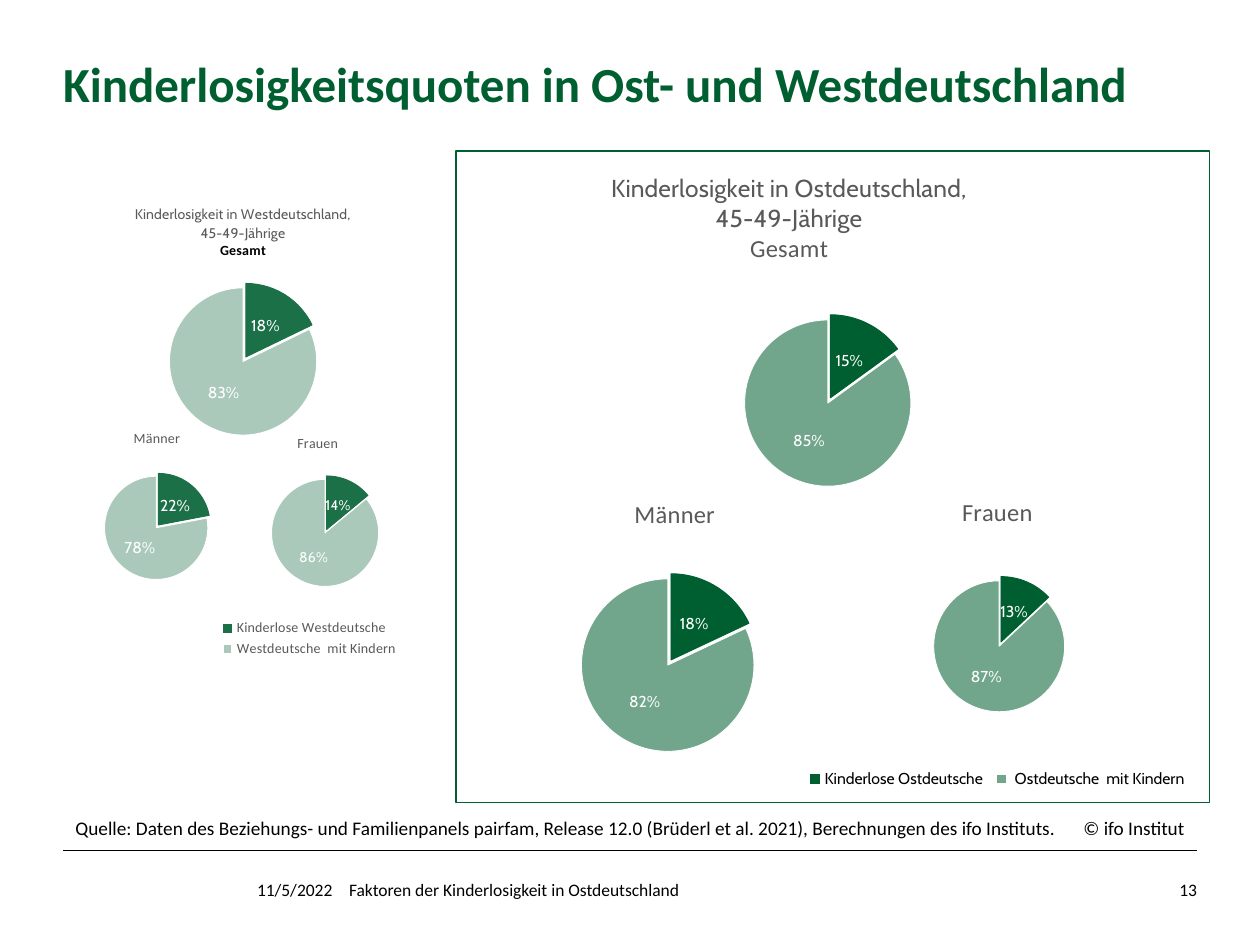
import lxml.etree
import pptx
import pptx.chart.data
import pptx.dml.color
import pptx.enum.chart
import pptx.enum.shapes
import pptx.enum.text
import pptx.oxml
import pptx.oxml.ns
import pptx.util

Inches = pptx.util.Inches
Pt = pptx.util.Pt
qn = pptx.oxml.ns.qn

GREEN, EAST_LIGHT = "005F30", "71A68C"
WEST_DARK, WEST_LIGHT = "1C7047", "AAC9BA"
GREY, BLACK, WHITE = "595959", "000000", "FFFFFF"
EAST = (GREEN, EAST_LIGHT)
WEST = (WEST_DARK, WEST_LIGHT)


def color(value):
    return pptx.dml.color.RGBColor.from_string(value)


class SlideBuilder:
    """Hold the style and the current slide, and add its elements."""

    def __init__(self, presentation):
        self.font = "Calibri"
        self.chart_font = "Cabin"
        self.slide = presentation.slides.add_slide(presentation.slide_layouts[5])

    def run(self, paragraph, text, size, fill=BLACK, bold=False, font=None):
        run = paragraph.add_run()
        run.text = text
        run.font.name = font or self.font
        run.font.size = Pt(size)
        run.font.bold = bold
        run.font.color.rgb = color(fill)

    def place(self, shape, box):
        shape.left, shape.top, shape.width, shape.height = map(Inches, box)

    def margins(self, frame, horizontal, vertical):
        frame.margin_left = frame.margin_right = Inches(horizontal)
        frame.margin_top = frame.margin_bottom = Inches(vertical)

    def title(self, text, box):
        shape = self.slide.shapes.title
        self.place(shape, box)
        frame = shape.text_frame
        self.margins(frame, 0, 0)
        frame.auto_size = pptx.enum.text.MSO_AUTO_SIZE.NONE
        frame.vertical_anchor = pptx.enum.text.MSO_ANCHOR.BOTTOM
        paragraph = frame.paragraphs[0]
        paragraph.alignment = pptx.enum.text.PP_ALIGN.LEFT
        paragraph.line_spacing = 0.85
        self.run(paragraph, text, 28, GREEN, True)

    def text(self, text, box, size=10, align="LEFT", margin=(0, 0)):
        frame = self.slide.shapes.add_textbox(*map(Inches, box)).text_frame
        frame.word_wrap = True
        self.margins(frame, *margin)
        paragraph = frame.paragraphs[0]
        paragraph.alignment = pptx.enum.text.PP_ALIGN[align]
        self.run(paragraph, text, size)

    def frame(self, box):
        shape = self.slide.shapes.add_shape(
            pptx.enum.shapes.MSO_SHAPE.RECTANGLE, *map(Inches, box))
        shape.shadow.inherit = False
        shape.fill.background()
        shape.line.color.rgb = color(GREEN)
        shape.line.width = Pt(1)

    def rule(self, start, end):
        line = self.slide.shapes.add_connector(
            pptx.enum.shapes.MSO_CONNECTOR.STRAIGHT, *map(Inches, start + end))
        line.line.color.rgb = color(BLACK)
        line.line.width = Pt(0.5)
        lxml.etree.SubElement(line._element.spPr, qn("a:effectLst"))

    def layout(self, parent, index, chart_box, box, inner=False):
        """Fix a chart part at a slide position, with a size when box has one."""
        for old in parent.findall(qn("c:layout")):
            parent.remove(old)
        layout = lxml.etree.Element(qn("c:layout"))
        manual = lxml.etree.SubElement(layout, qn("c:manualLayout"))
        left, top, width, height = chart_box
        values = [(box[0] - left) / width, (box[1] - top) / height]
        if len(box) == 4:
            values += [box[2] / width, box[3] / height]
        settings = [("layoutTarget", "inner")] if inner else []
        settings += [("xMode", "edge"), ("yMode", "edge")]
        settings += [(key, f"{value:.4f}") for key, value in zip("xywh", values)]
        for key, value in settings:
            lxml.etree.SubElement(manual, qn(f"c:{key}")).set("val", value)
        parent.insert(index, layout)

    def pie(self, box, shares, colors, heading, heading_at, center, diameter,
            label_size=9, names=("1", "2"), legend=None):
        data = pptx.chart.data.CategoryChartData()
        data.categories = names
        data.add_series("Series 1", shares)
        chart = self.slide.shapes.add_chart(
            pptx.enum.chart.XL_CHART_TYPE.PIE, *map(Inches, box), data).chart
        chart.font.name = self.chart_font
        chart.font.size = Pt(9)
        chart.font.color.rgb = color(BLACK)
        plot = chart.plots[0]
        plot.vary_by_categories = True

        chart.has_title = True
        frame = chart.chart_title.text_frame
        for index, (text, style) in enumerate(heading):
            paragraph = frame.add_paragraph() if index else frame.paragraphs[0]
            self.run(paragraph, text, **style)

        for index, fill in enumerate(colors):
            point = plot.series[0].points[index]
            point.format.fill.solid()
            point.format.fill.fore_color.rgb = color(fill)
            point.format.line.color.rgb = color(fill if index == 0 else WHITE)
            point.format.line.width = Pt(0.5)
        explosion = lxml.etree.Element(qn("c:explosion"))
        explosion.set("val", "7")
        first_point = next(chart.element.iter(qn("c:dPt")))
        first_point.find(qn("c:spPr")).addprevious(explosion)

        plot.has_data_labels = True
        labels = plot.data_labels
        labels.show_value = True
        labels.number_format = '0"%"'
        labels.number_format_is_linked = False
        labels.position = pptx.enum.chart.XL_LABEL_POSITION.CENTER
        labels.font.name = self.chart_font
        labels.font.size = Pt(label_size)
        labels.font.color.rgb = color(WHITE)

        chart.has_legend = legend is not None
        if legend:
            legend_box, size, fill, font = legend
            chart.legend.position = pptx.enum.chart.XL_LEGEND_POSITION.BOTTOM
            chart.legend.include_in_layout = False
            chart.legend.font.name = font
            chart.legend.font.size = Pt(size)
            chart.legend.font.color.rgb = color(fill)
            self.layout(chart.element.find(".//" + qn("c:legend")), 1, box, legend_box)

        self.layout(chart.element.find(".//" + qn("c:title")), 1, box, heading_at)
        corner = [middle - diameter / 2 for middle in center]
        self.layout(chart.element.find(".//" + qn("c:plotArea")), 0, box,
                    corner + [diameter, diameter], inner=True)
        background = pptx.oxml.parse_xml(
            f'<c:spPr {pptx.oxml.ns.nsdecls("c", "a")}><a:noFill/>'
            "<a:ln><a:noFill/></a:ln></c:spPr>")
        chart.element.find(qn("c:chart")).addnext(background)


def main():
    presentation = pptx.Presentation()
    presentation.slide_width, presentation.slide_height = Inches(10), Inches(7.5)
    builder = SlideBuilder(presentation)
    builder.rule((0.5, 6.75), (9.5, 6.75))
    builder.frame((3.62, 1.2, 5.98, 5.17))
    builder.title("Kinderlosigkeitsquoten in Ost- und Westdeutschland", (0.5, 0.42, 9, 0.47))
    builder.text("11/5/2022", (2.04, 6.98, 0.63, 0.16))
    builder.text("Faktoren der Kinderlosigkeit in Ostdeutschland", (2.77, 6.98, 4.42, 0.16))
    builder.text("13", (9.02, 6.98, 0.48, 0.16), align="RIGHT")
    builder.text("Quelle: Daten des Beziehungs- und Familienpanels pairfam, Release 12.0 "
                 "(Brüderl et al. 2021), Berechnungen des ifo Instituts.\t© ifo Institut",
                 (0.5, 6.43, 9.13, 0.29), size=11, margin=(0.1, 0.05))

    large = {"size": 14, "fill": GREY}
    small = {"size": 8, "fill": GREY}
    cabin = {"font": builder.chart_font}
    builder.pie((4.16, 1.25, 4.89, 2.76), (15, 85), EAST,
                [("Kinderlosigkeit in Ostdeutschland,", large | cabin),
                 ("45-49-Jährige", large | cabin), ("Gesamt", large)],
                (4.82, 1.33), (6.57, 3.2), 1.32)
    builder.pie((3.77, 3.81, 3.18, 2.28), (18, 82), EAST, [("Männer", large)],
                (5, 3.91), (5.3, 5.28), 1.37)
    builder.pie((6.24, 3.78, 3.35, 2.52), (13, 87), EAST, [("Frauen", large)],
                (7.6, 3.89), (7.93, 5.13), 1.04,
                names=("Kinderlose Ostdeutsche ", " Ostdeutsche  mit Kindern"),
                legend=((6.23, 6, 3.2, 0.24), 9, BLACK, builder.chart_font))
    builder.pie((0.7, 1.48, 2.48, 2.11), (18, 83), WEST,
                [("Kinderlosigkeit in Westdeutschland,", small | cabin),
                 ("45-49-Jährige", small | cabin),
                 ("Gesamt", {"size": 8, "bold": True})], (1.04, 1.58), (1.93, 2.87), 1.17)
    builder.pie((0.45, 3.3, 1.6, 1.46), (22, 78), WEST, [("Männer", small)],
                (1.04, 3.38), (1.24, 4.19), 0.82)
    builder.pie((1.49, 3.33, 2.08, 1.95), (14, 86), WEST, [("Frauen", small)],
                (2.34, 3.42), (2.58, 4.23), 0.85, label_size=8,
                names=("Kinderlose Westdeutsche ", "Westdeutsche  mit Kindern"),
                legend=((1.71, 4.89, 1.5, 0.36), 8, GREY, builder.font))
    presentation.save("out.pptx")


if __name__ == "__main__":
    main()
